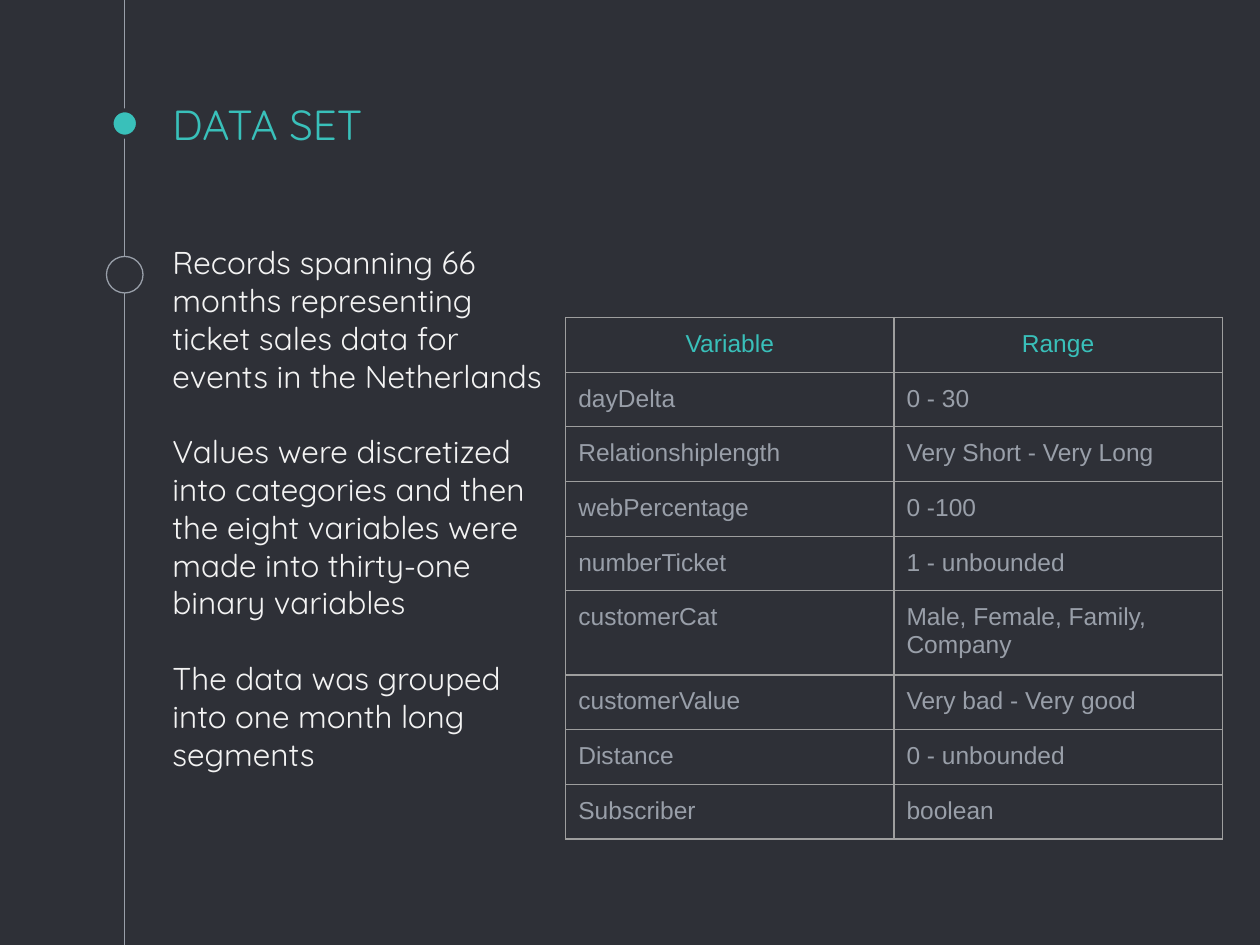
from lxml import etree
from pptx import Presentation
from pptx.dml.color import RGBColor
from pptx.enum.shapes import MSO_CONNECTOR, MSO_SHAPE
from pptx.enum.text import MSO_ANCHOR, PP_ALIGN
from pptx.oxml.ns import qn
from pptx.util import Inches, Pt

STRAIGHT = MSO_CONNECTOR.STRAIGHT
OVAL = MSO_SHAPE.OVAL
TOP, MIDDLE = MSO_ANCHOR.TOP, MSO_ANCHOR.MIDDLE
LEFT, CENTER = PP_ALIGN.LEFT, PP_ALIGN.CENTER

COLORS = {
    "background": "2E3037",
    "accent": "39C0BA",
    "muted": "999FA9",
    "body": "F3F3F3",
    "border": "9E9E9E",
}
INSET = Inches(0.1)

PARAGRAPHS = [
    "Records spanning 66 months representing ticket sales data for events in the Netherlands",
    "Values were discretized into categories and then the eight variables were made into thirty-one binary variables",
    "The data was grouped into one month long segments",
]
ROWS = [
    ("Variable", "Range"),
    ("dayDelta", "0 - 30"),
    ("Relationshiplength", "Very Short - Very Long"),
    ("webPercentage", "0 -100"),
    ("numberTicket", "1 - unbounded"),
    ("customerCat", "Male, Female, Family, Company"),
    ("customerValue", "Very bad - Very good"),
    ("Distance", "0 - unbounded"),
    ("Subscriber", "boolean"),
]


def rgb(name):
    return RGBColor.from_string(COLORS[name])


def add_run(p, text, font, size, color):
    r = p.add_run()
    r.text = text
    r.font.name = font
    r.font.size = Pt(size)
    r.font.color.rgb = rgb(color)


def add_text(s, box, paragraphs, size, color, anchor=TOP, gap=0):
    tf = s.shapes.add_textbox(*box).text_frame
    tf.word_wrap = True
    tf.vertical_anchor = anchor
    tf.margin_left = tf.margin_right = tf.margin_top = tf.margin_bottom = INSET
    for i, text in enumerate(paragraphs):
        p = tf.paragraphs[0] if i == 0 else tf.add_paragraph()
        p.space_before = Pt(gap if i else 0)
        add_run(p, text, "Quicksand", size, color)


def add_dot(s, x, y, size, fill, line, width):
    sp = s.shapes.add_shape(OVAL, x - size // 2, y - size // 2, size, size)
    sp.shadow.inherit = False
    sp.fill.solid()
    sp.fill.fore_color.rgb = rgb(fill)
    sp.line.color.rgb = rgb(line)
    sp.line.width = Pt(width)


def add_timeline(s, x, top, bottom):
    line = s.shapes.add_connector(STRAIGHT, x, top, x, bottom)
    line.line.color.rgb = rgb("muted")
    line.line.width = Pt(0.75)
    etree.SubElement(line._element.spPr, qn("a:effectLst"))
    add_dot(s, x, Inches(0.98), Inches(0.21), "accent", "background", 2.25)
    add_dot(s, x, Inches(2.18), Inches(0.29), "background", "muted", 0.75)


def set_borders(cell):
    tc_pr = cell._tc.get_or_add_tcPr()
    for i, side in enumerate(("lnL", "lnR", "lnT", "lnB")):
        ln = etree.Element(qn(f"a:{side}"), w=str(Pt(0.75)))
        fill = etree.SubElement(ln, qn("a:solidFill"))
        etree.SubElement(fill, qn("a:srgbClr"), val=COLORS["border"])
        tc_pr.insert(i, ln)


def add_variable_table(s, left, top, width, row_height):
    frame = s.shapes.add_table(len(ROWS), 2, left, top, width, row_height * len(ROWS))
    table = frame.table
    table.first_row = table.horz_banding = False
    for i, row in enumerate(ROWS):
        table.rows[i].height = row_height
        for j, text in enumerate(row):
            cell = table.cell(i, j)
            cell.fill.background()
            cell.margin_left = cell.margin_right = INSET
            cell.margin_top = cell.margin_bottom = INSET
            set_borders(cell)
            p = cell.text_frame.paragraphs[0]
            p.alignment = LEFT if i else CENTER
            add_run(p, text, "Arial", 14, "muted" if i else "accent")


def main():
    prs = Presentation()
    prs.slide_width, prs.slide_height = Inches(10), Inches(7.5)
    s = prs.slides.add_slide(prs.slide_layouts[6])
    s.background.fill.solid()
    s.background.fill.fore_color.rgb = rgb("background")

    add_timeline(s, Inches(0.99), 0, prs.slide_height)
    body_box = Inches(1.27), Inches(1.83), Inches(3.22), Inches(5.46)
    add_text(s, body_box, PARAGRAPHS, 18, "body", gap=21.6)
    title_box = Inches(1.27), Inches(0.73), Inches(7.5), Inches(0.5)
    add_text(s, title_box, ["DATA SET"], 24, "accent", anchor=MIDDLE)
    add_variable_table(s, Inches(4.49), Inches(2.52), Inches(5.21), Inches(0.42))
    prs.save("out.pptx")


if __name__ == "__main__":
    main()
